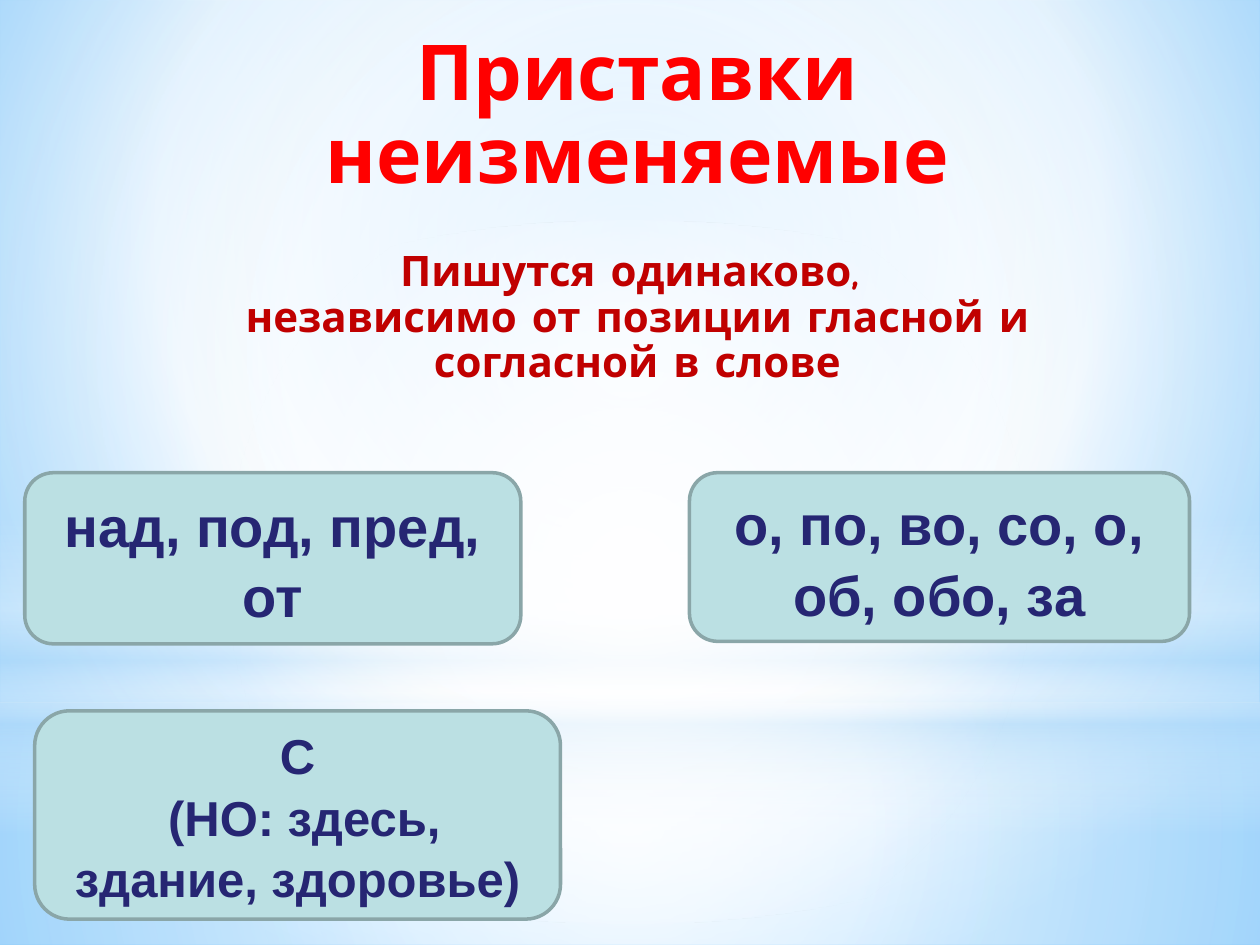
from lxml import etree
from pptx import Presentation
from pptx.dml.color import RGBColor as RGB
from pptx.enum.shapes import MSO_SHAPE as Kind
from pptx.enum.text import MSO_ANCHOR as Anchor, PP_ALIGN as Align
from pptx.oxml.ns import qn
from pptx.util import Cm, Pt

RED = RGB(0xFF, 0, 0)
DARK = RGB(0xC0, 0, 0)
NAVY = RGB(0x26, 0x26, 0x73)
TEAL = RGB(0xBB, 0xE0, 0xE3)
EDGE = RGB(0x8A, 0xA6, 0xA8)
WHITE = RGB(0xFF, 0xFF, 0xFF)
PALE = RGB(0xB4, 0xDC, 0xFA)
SKY = RGB(0x9E, 0xD5, 0xFF)
BLUE = RGB(0x5B, 0xB9, 0xFF)
MID = (50, 50, 50, 50)


def blend(fill, stops, rect):
    fill.gradient()
    grad = fill._fill._gradFill
    for part in list(grad):
        grad.remove(part)
    group = etree.SubElement(grad, qn("a:gsLst"))
    for place, color, alpha in stops:
        stop = etree.SubElement(group, qn("a:gs"), pos=str(place * 1000))
        tone = etree.SubElement(stop, qn("a:srgbClr"), val=str(color))
        if alpha < 100:
            etree.SubElement(tone, qn("a:alpha"), val=str(alpha * 1000))
    if rect:
        way = etree.SubElement(grad, qn("a:path"), path="circle")
        sides = {k: str(v * 1000) for k, v in zip("ltrb", rect)}
        etree.SubElement(way, qn("a:fillToRect"), **sides)
    else:
        etree.SubElement(grad, qn("a:lin"), ang="5400000", scaled="0")


def write(para, text, size, font, color):
    para.alignment = Align.CENTER
    run = para.add_run()
    run.text = text
    run.font.size = Pt(size)
    run.font.name = font
    run.font.bold = True
    run.font.color.rgb = color


deck = Presentation()
deck.slide_width, deck.slide_height = Cm(25.4), Cm(19.05)
slide = deck.slides.add_slide(deck.slide_layouts[5])
shapes = slide.shapes

blend(slide.background.fill,
      [(0, SKY, 100), (60, WHITE, 100), (100, BLUE, 100)], (20, 10, 20, 60))

layers = [
    (Kind.RECTANGLE, 14.17, 4.88,
     [(0, WHITE, 91), (37, WHITE, 76), (100, PALE, 79)], MID),
    (Kind.RECTANGLE, 0, 14.17,
     [(0, WHITE, 89), (48, WHITE, 62), (100, PALE, 79)], MID),
    (Kind.RECTANGLE, 10.46, 6.35,
     [(0, WHITE, 0), (29, WHITE, 30), (45, PALE, 40), (55, WHITE, 26),
      (65, PALE, 60), (100, WHITE, 0)], None),
    (Kind.OVAL, 4.45, 14.17, [(0, WHITE, 100), (56, WHITE, 0)], MID),
]
for kind, top, height, stops, rect in layers:
    layer = shapes.add_shape(kind, 0, Cm(top), deck.slide_width, Cm(height))
    layer.shadow.inherit = False
    layer.line.fill.background()
    blend(layer.fill, stops, rect)

title = shapes.title
shapes._spTree.append(title._element)
title.left, title.top = Cm(3.81), Cm(0.55)
title.width, title.height = Cm(18.08), Cm(3.18)
frame = title.text_frame
frame.word_wrap = True
frame.vertical_anchor = Anchor.TOP
head, rule = frame.paragraphs[0], frame.add_paragraph()
head.line_spacing = rule.line_spacing = 0.9
rule.space_before = Pt(29)
write(head, "Приставки неизменяемые", 44, "Comic Neue", RED)
write(rule, "Пишутся одинаково, ", 24, "Comic Neue", DARK)
rule.add_line_break()
write(rule, "независимо от позиции гласной и согласной в слове",
      24, "Comic Neue", DARK)

boxes = [
    (0.5, 9.53, 10, 3.45, 32, ["над, под, пред, от"]),
    (13.9, 9.53, 10.08, 3.4, 32, ["о, по, во, со, о, об, обо, за"]),
    (0.7, 14.33, 10.6, 4.2, 28, ["С", " (НО: здесь, здание, здоровье)"]),
]
for left, top, width, height, size, lines in boxes:
    box = shapes.add_shape(Kind.ROUNDED_RECTANGLE,
                           Cm(left), Cm(top), Cm(width), Cm(height))
    box.shadow.inherit = False
    box.fill.solid()
    box.fill.fore_color.rgb = TEAL
    box.line.color.rgb = EDGE
    box.line.width = Pt(2)
    frame = box.text_frame
    frame.word_wrap = True
    frame.vertical_anchor = Anchor.MIDDLE
    for i, line in enumerate(lines):
        para = frame.add_paragraph() if i else frame.paragraphs[0]
        para.line_spacing = 1.05
        write(para, line, size, "Arial", NAVY)

deck.save("out.pptx")
